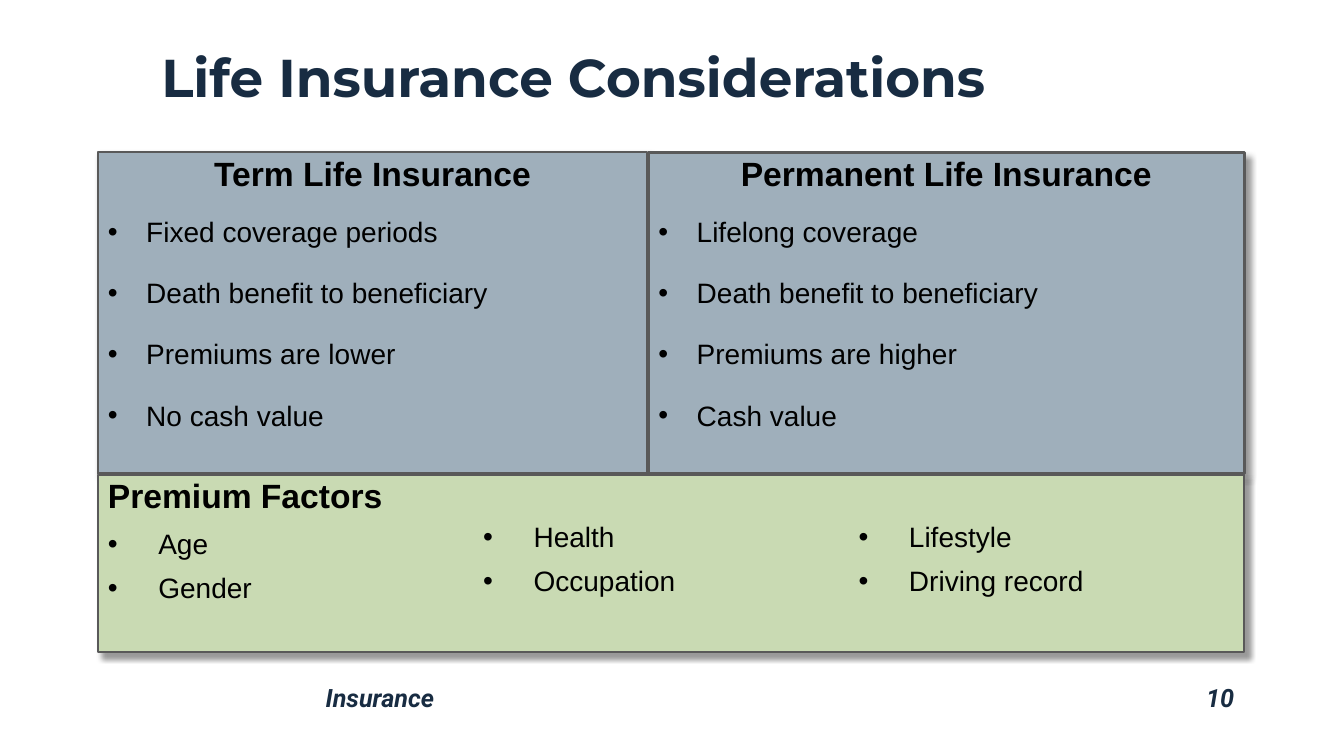
from lxml.etree import SubElement
from pptx import Presentation
from pptx.dml.color import RGBColor
from pptx.enum.text import MSO_ANCHOR as Anchor, MSO_AUTO_SIZE as AutoSize, PP_ALIGN as Align
from pptx.oxml.ns import qn
from pptx.util import Inches, Pt

COLORS = {"navy": "182C42", "black": "000000", "slate": "9FAFBB",
          "green": "C9DAB3", "border": "595959"}
LEFT, RIGHT = 0.97, 12.34
MARGIN = 0.1


def color(name):
    return RGBColor.from_string(COLORS[name])


def place(box, left, top, width, height, anchor=Anchor.TOP):
    box.left, box.top = Inches(left), Inches(top)
    box.width, box.height = Inches(width), Inches(height)
    frame = box.text_frame
    frame.word_wrap = True
    frame.auto_size = AutoSize.NONE
    frame.vertical_anchor = anchor
    frame.margin_left = frame.margin_right = Inches(MARGIN)
    frame.margin_top = frame.margin_bottom = Inches(0.05)
    return frame


def write(para, text, size, face="Arial", tint="black", bold=False, italic=False,
          align=Align.LEFT, before=0, after=0, indent=0):
    """Fill one paragraph; an indent makes it a bullet."""
    para.text = text
    props = para._p.get_or_add_pPr()
    props.set("marL", str(Inches(indent)))
    props.set("indent", str(-Inches(indent)))
    if indent:
        SubElement(props, qn("a:buFont")).set("typeface", "Arial")
        SubElement(props, qn("a:buChar")).set("char", "•")
    else:
        SubElement(props, qn("a:buNone"))
    para.alignment = align
    para.line_spacing = 0.9
    para.space_before, para.space_after = Pt(before), Pt(after)
    for span in para.runs:
        font = span.font
        font.name, font.size = face, Pt(size)
        font.bold, font.italic = bold, italic
        font.color.rgb = color(tint)


def style_panel(box, fill, line_width, distance):
    box.fill.solid()
    box.fill.fore_color.rgb = color(fill)
    box.line.color.rgb = color("border")
    box.line.width = Pt(line_width)
    # Soft shadow towards the lower right
    box.shadow.inherit = False
    effects = box._element.spPr.find(qn("a:effectLst"))
    shadow = SubElement(effects, qn("a:outerShdw"), blurRad=str(Pt(4)),
                        dist=str(Pt(distance)), dir="2700000", algn="tl", rotWithShape="0")
    tint = SubElement(shadow, qn("a:srgbClr"), val=COLORS["black"])
    SubElement(tint, qn("a:alpha"), val="40000")


def policy_panel(box, left, width, heading, points, line_width, distance):
    frame = place(box, left, 1.51, width, 3.19)
    style_panel(box, "slate", line_width, distance)
    write(frame.paragraphs[0], heading, 24, bold=True, align=Align.CENTER)
    for number, point in enumerate(points):
        write(frame.add_paragraph(), point, 20, before=10 if number else 18,
              after=12, indent=0.38)


def factors_panel(page, box, heading, columns):
    top, width = 4.71, RIGHT - LEFT
    frame = place(box, LEFT, top, width, 1.76)
    style_panel(box, "green", 1.75, 5)
    write(frame.paragraphs[0], heading, 24, bold=True)
    # The first column sits under the heading
    for factor in columns[0]:
        write(frame.add_paragraph(), factor, 20, before=10, indent=0.5)
    # The others start in equal thirds of the text area
    step = (width - 2 * MARGIN) / len(columns)
    for number, factors in enumerate(columns[1:], 1):
        column = page.shapes.add_textbox(0, 0, 0, 0)
        frame = place(column, LEFT + number * step, top + 0.43, step, 1)
        for row, factor in enumerate(factors):
            para = frame.add_paragraph() if row else frame.paragraphs[0]
            write(para, factor, 20, before=10 if row else 0, indent=0.5)


def footer(page, subject_box, subject, number):
    number_box = page.shapes.add_textbox(0, 0, 0, 0)
    for box, left, width, text, align in (
            (subject_box, 3.13, 7.63, subject, Align.LEFT),
            (number_box, 10.76, 1.58, number, Align.RIGHT)):
        frame = place(box, left, 6.75, width, 0.38)
        write(frame.paragraphs[0], text, 18, "Roboto", "navy", True, True, align)


def main():
    deck = Presentation()
    deck.slide_width, deck.slide_height = Inches(13.33), Inches(7.5)
    page = deck.slides.add_slide(deck.slide_layouts.get_by_name("Comparison"))
    title, term, permanent, factors, subject = page.placeholders

    # Title
    frame = place(title, 1.5, 0.11, 10.84, 1.02, Anchor.BOTTOM)
    write(frame.paragraphs[0], "Life Insurance Considerations", 38, "Montserrat", "navy", True)

    # Two kinds of policy side by side
    policy_panel(term, LEFT, 5.45, "Term Life Insurance",
                 ["Fixed coverage periods", "Death benefit to beneficiary",
                  "Premiums are lower", "No cash value"], 1.75, 3)
    policy_panel(permanent, 6.43, RIGHT - 6.43, "Permanent Life Insurance",
                 ["Lifelong coverage", "Death benefit to beneficiary",
                  "Premiums are higher", "Cash value"], 2, 5)

    # What sets the premium
    factors_panel(page, factors, "Premium Factors",
                  [["Age", "Gender"], ["Health", "Occupation"],
                   ["Lifestyle", "Driving record"]])

    footer(page, subject, "Insurance", "10")
    deck.save("out.pptx")


if __name__ == "__main__":
    main()
